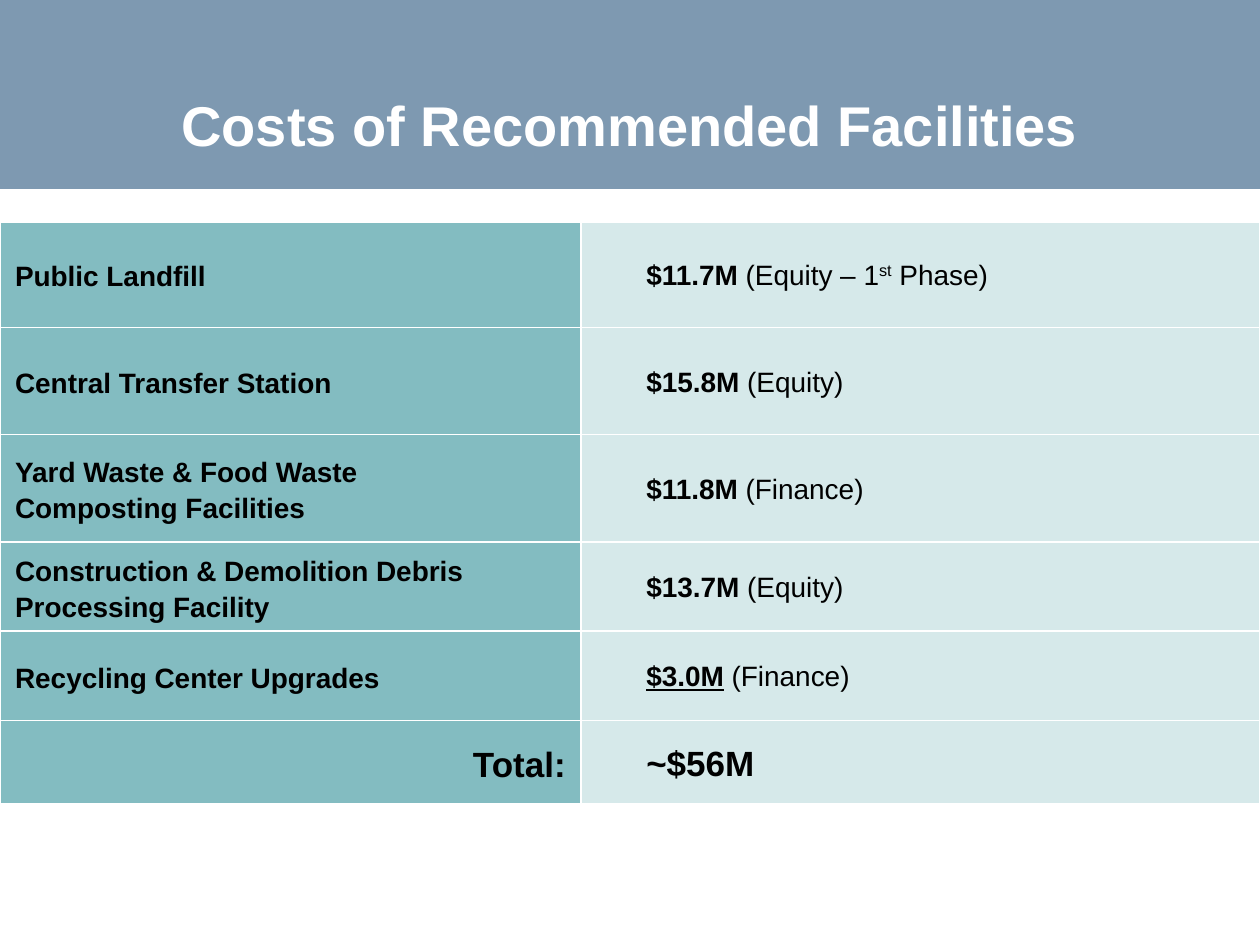
"""Build a slide that lists the costs of recommended facilities in a table."""
from lxml.etree import SubElement as Sub
from pptx import Presentation
from pptx.dml.color import RGBColor as Rgb
from pptx.enum.shapes import MSO_SHAPE as Shape
from pptx.enum.text import MSO_ANCHOR as Anchor, PP_ALIGN as Align
from pptx.oxml.ns import qn
from pptx.util import Inches, Pt

TITLE = "Costs of Recommended Facilities"
BOLD, PLAIN = {"bold": True}, {"bold": False}
LINED = {"bold": True, "underline": True}
RAISED = {"bold": False, "base": 30000}
COSTS = [
    (["Public Landfill"],
     [("$11.7M ", BOLD), ("(Equity – 1", PLAIN), ("st", RAISED), (" Phase)", PLAIN)]),
    (["Central Transfer Station"], [("$15.8M ", BOLD), ("(Equity)", PLAIN)]),
    (["Yard Waste & Food Waste", "Composting Facilities"],
     [("$11.8M ", BOLD), ("(Finance)", PLAIN)]),
    (["Construction & Demolition Debris Processing Facility"],
     [("$13.7M ", BOLD), ("(Equity)", PLAIN)]),
    (["Recycling Center Upgrades"],
     [("$3.0M", LINED), (" ", BOLD), ("(Finance)", PLAIN)]),
    (["Total:"], [("~$56M", BOLD)]),
]
THEME = {"font": "Arial", "band": "7E99B1", "name": "83BCC1", "cost": "D6E9EA",
         "rule": "FFFFFF", "light": "FFFFFF", "dark": "000000",
         "head": 32, "body": 16, "total": 20}
WIDE, HIGH = 10, 7.5
BAND = HIGH / 5
TOP = 1.75
COLS = [4.61, 5.39]
ROWS = [0.85] * 3 + [0.71] * 2 + [0.66]
PAD, DEEP = 0.12, 0.52


def put(item, values):
    for key, value in values.items():
        setattr(item, key, value)


def write(para, text, size, color, look):
    run = para.add_run()
    run.text = text
    put(run.font, {"name": THEME["font"], "size": Pt(size),
                   "bold": look["bold"], "underline": look.get("underline")})
    run.font.color.rgb = Rgb.from_string(color)
    if "base" in look:
        run._r.get_or_add_rPr().set("baseline", str(look["base"]))


def rule(cell, first):
    props = cell._tc.get_or_add_tcPr()
    for side in "LRTB":
        width = Pt(3 if first and side == "T" else 1)
        line = Sub(props, qn(f"a:ln{side}"), w=str(width))
        Sub(Sub(line, qn("a:solidFill")), qn("a:srgbClr"), val=THEME["rule"])


def fill(cell, lines, left, size, space, color, align, first):
    rule(cell, first)
    cell.fill.solid()
    cell.fill.fore_color.rgb = Rgb.from_string(color)
    put(cell, {"margin_left": Inches(left), "margin_right": Inches(PAD),
               "margin_top": Inches(0.01), "margin_bottom": 0,
               "vertical_anchor": Anchor.MIDDLE})
    frame = cell.text_frame
    for pos, runs in enumerate(lines):
        para = frame.add_paragraph() if pos else frame.paragraphs[0]
        put(para, {"line_spacing": space, "alignment": align})
        for text, look in runs:
            write(para, text, size, THEME["dark"], look)


def add_title(slide):
    band = slide.shapes.add_shape(Shape.RECTANGLE, 0, 0, Inches(WIDE), Inches(BAND))
    band.shadow.inherit = False
    band.fill.solid()
    band.fill.fore_color.rgb = Rgb.from_string(THEME["band"])
    band.line.fill.background()
    box = slide.shapes.add_textbox(0, Inches(0.3), Inches(WIDE), Inches(0.95))
    frame = box.text_frame
    put(frame, {"word_wrap": True, "vertical_anchor": Anchor.BOTTOM,
                "margin_left": Inches(0.4), "margin_right": Inches(0.4),
                "margin_top": 0, "margin_bottom": 0})
    para = frame.paragraphs[0]
    put(para, {"alignment": Align.CENTER, "line_spacing": Pt(34)})
    write(para, TITLE, THEME["head"], THEME["light"], BOLD)


def add_costs(slide):
    table = slide.shapes.add_table(len(ROWS), len(COLS), 0, Inches(TOP),
                                   Inches(WIDE), Inches(sum(ROWS))).table
    put(table, {"first_row": False, "horz_banding": False})
    for col, width in zip(table.columns, COLS):
        col.width = Inches(width)
    for pos, (names, cost) in enumerate(COSTS):
        table.rows[pos].height = Inches(ROWS[pos])
        last = pos == len(COSTS) - 1
        size = THEME["total" if last else "body"]
        align = Align.RIGHT if last else Align.LEFT
        lines = [[(name, BOLD)] for name in names]
        fill(table.cell(pos, 0), lines, PAD, size, 1.15, THEME["name"], align, pos == 0)
        fill(table.cell(pos, 1), [cost], DEEP, size, 1.05, THEME["cost"],
             Align.LEFT, pos == 0)


def main():
    deck = Presentation()
    put(deck, {"slide_width": Inches(WIDE), "slide_height": Inches(HIGH)})
    slide = deck.slides.add_slide(deck.slide_layouts[6])
    add_title(slide)
    add_costs(slide)
    deck.save("out.pptx")


if __name__ == "__main__":
    main()
